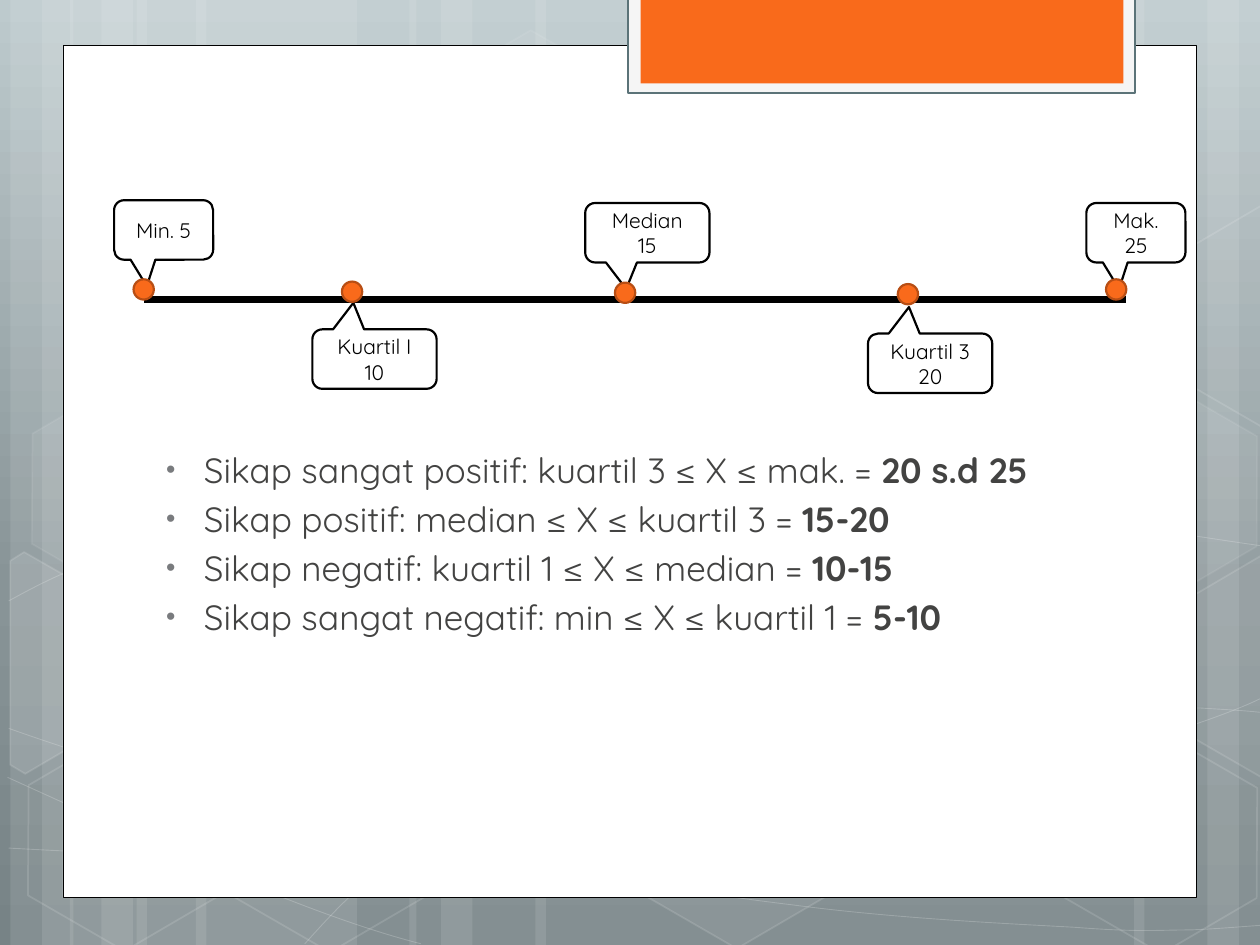
from copy import deepcopy
from math import cos, radians, sin
from typing import NamedTuple, Optional

from lxml.etree import SubElement
from pptx import Presentation
from pptx.dml.color import RGBColor
from pptx.enum.shapes import MSO_CONNECTOR as Connector, MSO_SHAPE as Shape
from pptx.enum.text import MSO_ANCHOR as Anchor, PP_ALIGN as Align
from pptx.oxml.ns import qn
from pptx.util import Pt

FONT = "Quicksand"
WIDTH, HEIGHT = 720, 540
TILT = 30
COLORS = {
    "white": "FFFFFF", "black": "000000", "orange": "F96A1B", "rust": "B84E14",
    "frame": "F5F5F5", "slate": "5B7378", "text": "434342", "bullet": "797B7E",
    "sky_top": "BDCACD", "sky_mid": "889497", "sky_end": "778386",
}


class Hexagon(NamedTuple):
    x: float
    y: float
    fill_alpha: int
    line_alpha: int


class Fragment(NamedTuple):
    center: tuple
    points: list
    fill_alpha: int


class Callout(NamedTuple):
    label: str
    x: float
    y: float
    w: float
    tip: float


class Rule(NamedTuple):
    condition: str
    score: str


BANDS = [(78, 126), (6, 36), (24, 60), (112, 126), (40, 36), (58, 60),
         (528, 126), (690, 36), (648, 60), (306, 222), (234, 36), (252, 60)]
CURVES = [
    [(5, 484.6), (43.9, 486.7), (82.8, 488.9), (136.8, 488.2), (190.8, 487.4), (257.8, 486),
     (329.8, 478.8), (401.8, 471.6), (504, 457.9), (570.2, 444.2), (635.8, 430.6),
     (703.4, 409), (725, 396.7)],
    [(5, 343.4), (25.9, 331.9), (46.8, 321.1), (87.1, 310.3), (128.2, 299.5), (186.5, 283.7),
     (249.8, 278.6), (313.9, 273.6), (391.7, 272.9), (470.9, 278.6), (550.1, 284.4),
     (681.8, 306.7), (725, 312.5)],
    [(4.3, 444.2), (91.4, 483.8), (177.8, 523.4), (240.5, 539.3)],
    [(5, 416.2), (27.4, 424.1), (50.4, 432), (92.2, 443.5), (133.9, 454.3), (196.6, 472.3),
     (257, 484.6), (316.8, 496.8), (392.4, 509.8), (452.2, 517), (511.9, 524.9), (576, 527.8),
     (614.2, 529.9), (651.6, 532.8), (661.7, 531.4), (680.4, 531.4), (699.1, 530.6),
     (712.1, 529.2), (725, 528.5)],
    [(174.2, 539.3), (187.2, 524.9), (200.2, 510.5), (217.4, 497.5), (234.7, 484.6),
     (259.2, 470.2), (279.4, 460.1), (299.5, 450), (311.8, 445.7), (338.4, 438.5),
     (364.3, 431.3), (412.6, 421.2), (437.8, 416.2), (463.7, 411.1), (467.3, 411.1),
     (489.6, 409.7), (511.9, 407.5), (547.2, 405.4), (571.7, 404.6), (596.9, 403.9),
     (637.9, 404.6), (637.9, 404.6), (654, 404.6), (670, 404.6), (686.2, 404.6),
     (699.1, 405.4), (711.4, 406.1), (717.8, 406.8), (724.3, 407.5), (722.2, 406.8),
     (724.3, 407.5)],
]
HEXAGONS = [
    Hexagon(240.5, 25.9, 4, 8), Hexagon(357.8, 424.1, 6, 12), Hexagon(7.9, 425.5, 0, 12),
    Hexagon(10.1, 224.6, 7, 8), Hexagon(125.3, 426.2, 0, 12), Hexagon(542.2, 326.2, 10, 12),
    Hexagon(600.5, 427, 0, 12), Hexagon(600.5, 226.1, 7, 8),
]
FRAGMENTS = [
    Fragment((25.9, 385.2), [(5.8, 320.4), (13.7, 315.4), (69.1, 347), (68.4, 410.4),
                             (14.4, 442.1), (5.8, 437)], 10),
    Fragment((709.2, 374.4), [(666.7, 349.2), (720.7, 317.5), (726.5, 321.1), (726.5, 441.4),
                              (721.4, 444.2), (666.7, 412.6)], 4),
    Fragment((709.2, 173.5), [(666.7, 149), (720.7, 117.4), (727.2, 121), (726.5, 241.2),
                              (721.4, 244.1), (666.7, 212.4)], 0),
]
CALLOUTS = [
    Callout("Min. 5", 65.2, 114.4, 56.6, 0.946),
    Callout("Mak. 25", 620.8, 116, 56.6, 0.946),
    Callout("Median 15", 334.4, 116, 71, 0.946),
    Callout("Kuartil I 10", 178.5, 188.2, 71, -0.946),
    Callout("Kuartil 3 20", 496, 190.6, 71, -0.946),
]
MARKERS = [(76.3, 159.6), (195.4, 160.9), (351.4, 161.5), (513, 162.3), (632, 159.6)]
RULES = [
    Rule("Sikap sangat positif: kuartil 3 ≤ X ≤ mak. = ", "20 s.d 25"),
    Rule("Sikap positif: median ≤ X ≤ kuartil 3 = ", "15-20"),
    Rule("Sikap negatif: kuartil 1 ≤ X ≤ median = ", "10-15"),
    Rule("Sikap sangat negatif: min ≤ X ≤ kuartil 1 = ", "5-10"),
]


def rgb(name: str) -> RGBColor:
    return RGBColor.from_string(COLORS[name])


def paint(target, name: str, alpha: int = 100) -> None:
    target.solid()
    target.fore_color.rgb = rgb(name)
    if alpha < 100:
        color = target._xPr.find(qn("a:solidFill"))[0]
        SubElement(color, qn("a:alpha"), val=str(alpha * 1000))


def style(sp, fill: Optional[str], line: Optional[str] = None, width: float = 1,
          fill_alpha: int = 100, line_alpha: int = 100) -> None:
    sp.shadow.inherit = False
    if fill and fill_alpha:
        paint(sp.fill, fill, fill_alpha)
    else:
        sp.fill.background()
    if line:
        sp.line.width = Pt(width)
        paint(sp.line.fill, line, line_alpha)
    else:
        sp.line.fill.background()


def add_preset(s, kind, x: float, y: float, w: float, h: float, fill: Optional[str], **look):
    sp = s.shapes.add_shape(kind, Pt(x), Pt(y), Pt(w), Pt(h))
    style(sp, fill, **look)
    return sp


def add_outline(s, points: list, closed: bool):
    start, *rest = [(Pt(x), Pt(y)) for x, y in points]
    builder = s.shapes.build_freeform(*start, scale=1.0)
    builder.add_line_segments(rest, close=closed)
    return builder.convert_to_shape()


def add_curve(s, knots: list):
    sp = add_outline(s, knots, False)
    segments = list(sp._element.iter(qn("a:lnTo")))
    outline = segments[0].getparent()
    for i in range(0, len(segments), 3):
        bezier = SubElement(outline, qn("a:cubicBezTo"))
        for segment in segments[i:i + 3]:
            bezier.append(segment[0])
            outline.remove(segment)
    return sp


def untilt(point: tuple, center: tuple) -> tuple:
    dx, dy = point[0] - center[0], point[1] - center[1]
    c, n = cos(radians(TILT)), sin(radians(TILT))
    return center[0] + dx * c + dy * n, center[1] - dx * n + dy * c


def format_run(r, size: float, color: str, bold: bool = False) -> None:
    r.font.name, r.font.size, r.font.bold = FONT, Pt(size), bold
    r.font.color.rgb = rgb(color)


def add_backdrop(s) -> None:
    fill = s.background.fill
    fill.gradient()
    fill.gradient_angle = 270
    first = fill.gradient_stops[0]._gs
    first.addnext(deepcopy(first))
    for stop, name, pos in zip(fill.gradient_stops, ("sky_top", "sky_mid", "sky_end"),
                               (0, 0.62, 1)):
        stop.color.rgb = rgb(name)
        stop.position = pos
    for x, w in BANDS:
        add_preset(s, Shape.RECTANGLE, x, 0, w, HEIGHT, "white", fill_alpha=10)
    for knots in CURVES:
        style(add_curve(s, knots), None, "white", 0.5, line_alpha=20)
    for h in HEXAGONS:
        sp = add_preset(s, Shape.HEXAGON, h.x, h.y, 126, 109.4, "white", line="white",
                        fill_alpha=h.fill_alpha, line_alpha=h.line_alpha)
        sp.adjustments[0], sp.adjustments[1] = 0.285, 1.155
        sp.rotation = TILT
    for f in FRAGMENTS:
        sp = add_outline(s, [untilt(point, f.center) for point in f.points], True)
        style(sp, "white", "white", 1, f.fill_alpha, 12)
        sp.rotation = TILT


def add_panel(s) -> None:
    add_preset(s, Shape.RECTANGLE, 36, 26, 648, 487, "white", line="black", width=0.5)
    add_preset(s, Shape.RECTANGLE, 359, -1.4, 289.6, 54.7, "frame", line="slate", width=1.25)
    add_preset(s, Shape.RECTANGLE, 366, -1.4, 276, 49, "orange")


def add_rules(s) -> None:
    tf = s.shapes.add_textbox(Pt(82), Pt(252.7), Pt(533.5), Pt(206)).text_frame
    tf.word_wrap = True
    for i, rule in enumerate(RULES):
        p = tf.paragraphs[0] if i == 0 else tf.add_paragraph()
        p.space_before = Pt(3.9)
        for text, bold in zip(rule, (False, True)):
            r = p.add_run()
            r.text = text
            format_run(r, 20, "text", bold)
        pPr = p._p.get_or_add_pPr()
        pPr.set("marL", str(Pt(27.4)))
        pPr.set("indent", str(Pt(-21.6)))
        SubElement(SubElement(pPr, qn("a:buClr")), qn("a:srgbClr"), val=COLORS["bullet"])
        SubElement(pPr, qn("a:buSzPct"), val="76000")
        SubElement(pPr, qn("a:buFont"), typeface="Arial")
        SubElement(pPr, qn("a:buChar"), char="•")


def add_scale(s) -> None:
    axis = s.shapes.add_connector(Connector.STRAIGHT, Pt(82.3), Pt(171.3), Pt(643.5), Pt(171.3))
    axis.line.width = Pt(3.75)
    axis.line.color.rgb = rgb("black")
    SubElement(axis._element.spPr, qn("a:effectLst"))
    for c in CALLOUTS:
        sp = add_preset(s, Shape.ROUNDED_RECTANGULAR_CALLOUT, c.x, c.y, c.w, 34, "white",
                        line="black", width=1.25)
        for i, value in enumerate((-0.17, c.tip, 0.167)):
            sp.adjustments[i] = value
        tf = sp.text_frame
        tf.text = c.label
        tf.word_wrap = True
        tf.vertical_anchor = Anchor.MIDDLE
        p = tf.paragraphs[0]
        p.alignment = Align.CENTER
        format_run(p.runs[0], 12, "black")
    for x, y in MARKERS:
        add_preset(s, Shape.FLOWCHART_CONNECTOR, x, y, 11.6, 11.6, "orange", line="rust",
                   width=1.25)


def main() -> None:
    prs = Presentation()
    prs.slide_width, prs.slide_height = Pt(WIDTH), Pt(HEIGHT)
    s = prs.slides.add_slide(prs.slide_layouts[6])
    for draw in (add_backdrop, add_panel, add_rules, add_scale):
        draw(s)
    prs.save("out.pptx")


if __name__ == "__main__":
    main()
